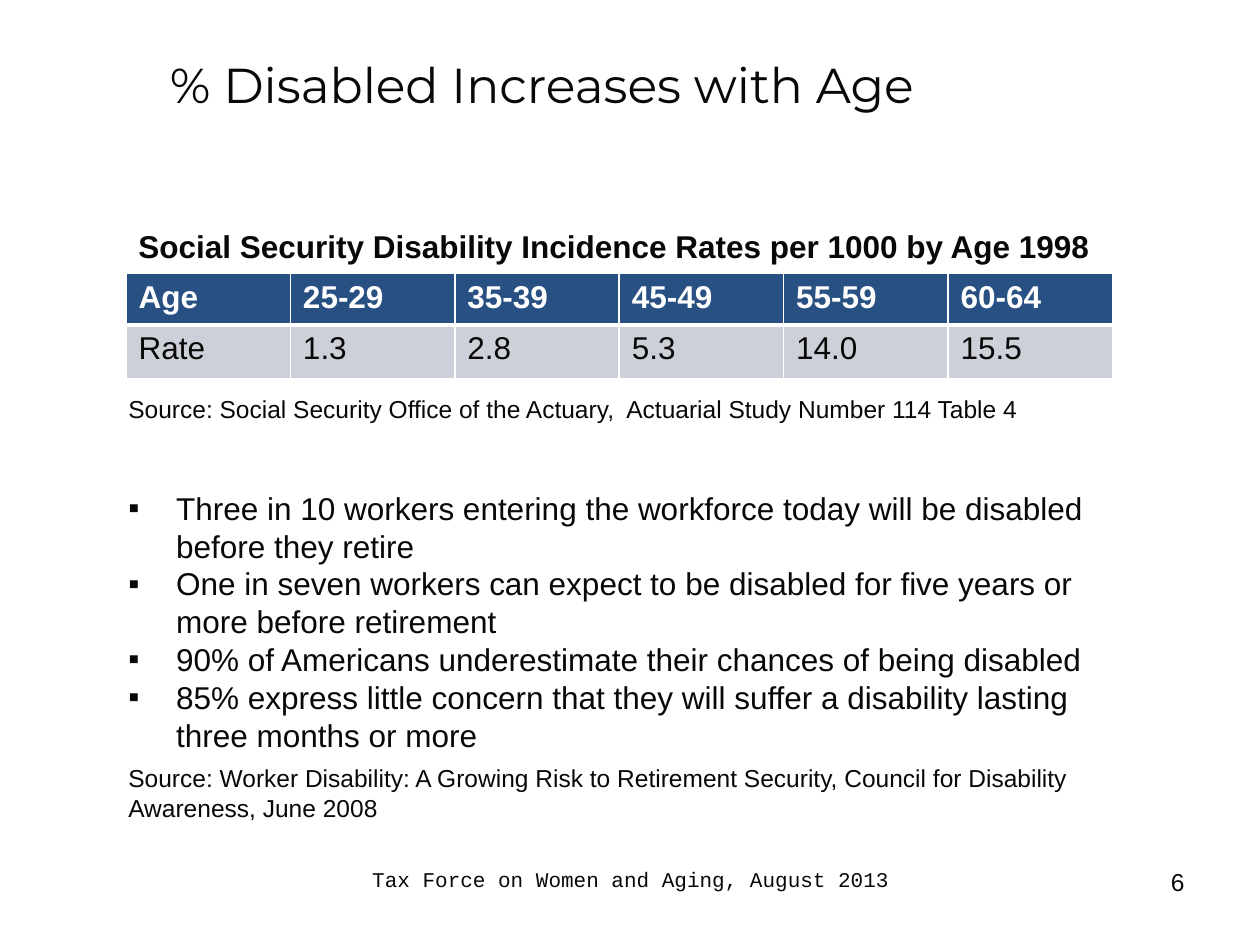
from lxml.etree import SubElement
from pptx import Presentation
from pptx.dml.color import RGBColor
from pptx.enum.text import MSO_ANCHOR as Anchor, MSO_AUTO_SIZE as AutoSize, PP_ALIGN as Align
from pptx.oxml.ns import qn
from pptx.util import Inches, Pt

# Content
TITLE = "% Disabled Increases with Age"
TABLE_HEADING = "Social Security Disability Incidence Rates per 1000 by Age 1998"
RATES = [
    ("Age", "25-29", "35-39", "45-49", "55-59", "60-64"),
    ("Rate", "1.3", "2.8", "5.3", "14.0", "15.5"),
]
TABLE_SOURCE = "Source: Social Security Office of the Actuary,  Actuarial Study Number 114 Table 4"
FINDINGS = [
    "Three in 10 workers entering the workforce today will be disabled before they retire",
    "One in seven workers can expect to be disabled for five years or more before retirement",
    "90% of Americans underestimate their chances of being disabled",
    "85% express little concern that they will suffer a disability lasting three months or more",
]
FINDINGS_SOURCE = ("Source: Worker Disability: A Growing Risk to Retirement Security, "
                   "Council for Disability Awareness, June 2008")
FOOTER = "Tax Force on Women and Aging, August 2013"
PAGE_NUMBER = "6"

COLORS = {"ink": "080808", "white": "FFFFFF", "header": "285082", "body": "CDD0D8"}
TABLE_AT = (1, 2.17, 7.83, 0.83)
ROW_HEIGHTS = (0.41, 0.43)
BULLET_INDENT = 0.38
BODY_LEFT = 0.92


def rgb(name):
    return RGBColor.from_string(COLORS[name])


def write(frame, lines, size=18, font="Arial", color="ink", bold=False,
          align=Align.LEFT, bullet=None):
    """Fill a text frame with one paragraph per line."""
    for index, line in enumerate(lines):
        para = frame.paragraphs[0] if index == 0 else frame.add_paragraph()
        para.alignment = align
        span = para.add_run()
        span.text = line
        span.font.size = Pt(size)
        span.font.name = font
        span.font.bold = bold
        span.font.color.rgb = rgb(color)
        if bullet:
            props = para._p.get_or_add_pPr()
            props.set("marL", str(Inches(BULLET_INDENT)))
            props.set("indent", str(-Inches(BULLET_INDENT)))
            SubElement(props, qn("a:buFont"), typeface="Arial")
            SubElement(props, qn("a:buChar"), char=bullet)


def add_text(page, at, lines, anchor=Anchor.TOP, wrap=True, grow=False, **style):
    box = page.shapes.add_textbox(*map(Inches, at))
    frame = box.text_frame
    frame.word_wrap = wrap
    frame.auto_size = AutoSize.SHAPE_TO_FIT_TEXT if grow else AutoSize.NONE
    frame.vertical_anchor = anchor
    write(frame, lines, **style)


def set_borders(cell, widths):
    """Draw white borders; the XML order must precede the cell's fill."""
    props = cell._tc.get_or_add_tcPr()
    for side, width in widths.items():
        line = SubElement(props, qn(f"a:ln{side}"), w=str(Pt(width)))
        fill = SubElement(line, qn("a:solidFill"))
        SubElement(fill, qn("a:srgbClr"), val=COLORS["white"])


def add_rates(page):
    columns = len(RATES[0])
    table = page.shapes.add_table(len(RATES), columns, *map(Inches, TABLE_AT)).table
    for column in table.columns:
        column.width = Inches(TABLE_AT[2] / columns)
    for r, values in enumerate(RATES):
        header = r == 0
        table.rows[r].height = Inches(ROW_HEIGHTS[r])
        for c, value in enumerate(values):
            cell = table.cell(r, c)
            set_borders(cell, {"L": 1, "R": 1, "T": 1 if header else 3, "B": 3 if header else 1})
            cell.fill.solid()
            cell.fill.fore_color.rgb = rgb("header" if header else "body")
            write(cell.text_frame, [value], bold=header, color="white" if header else "ink")


def main():
    deck = Presentation()
    deck.slide_width, deck.slide_height = Inches(10), Inches(7.5)
    page = deck.slides.add_slide(deck.slide_layouts[6])

    # Title
    add_text(page, (1.25, 0.17, 8.25, 1), [TITLE], anchor=Anchor.MIDDLE,
             size=28, font="Montserrat")

    # Incidence table with heading and source
    add_text(page, (1, 1.75, 8.25, 0.4), [TABLE_HEADING], grow=True, bold=True)
    add_rates(page)
    add_text(page, (BODY_LEFT, 3.08, 7.3, 0.34), [TABLE_SOURCE], wrap=False, grow=True, size=14)

    # Findings and source
    add_text(page, (BODY_LEFT, 3.83, 8.17, 2.22), FINDINGS, grow=True, bullet="▪")
    add_text(page, (BODY_LEFT, 6.01, 7.67, 0.57), [FINDINGS_SOURCE], grow=True, size=14)

    # Footer
    add_text(page, (2.67, 6.83, 4.67, 0.52), [FOOTER], size=12, font="Courier New",
             align=Align.CENTER)
    add_text(page, (7.17, 6.83, 2.33, 0.52), [PAGE_NUMBER], size=14, align=Align.RIGHT)

    deck.save("out.pptx")


if __name__ == "__main__":
    main()
